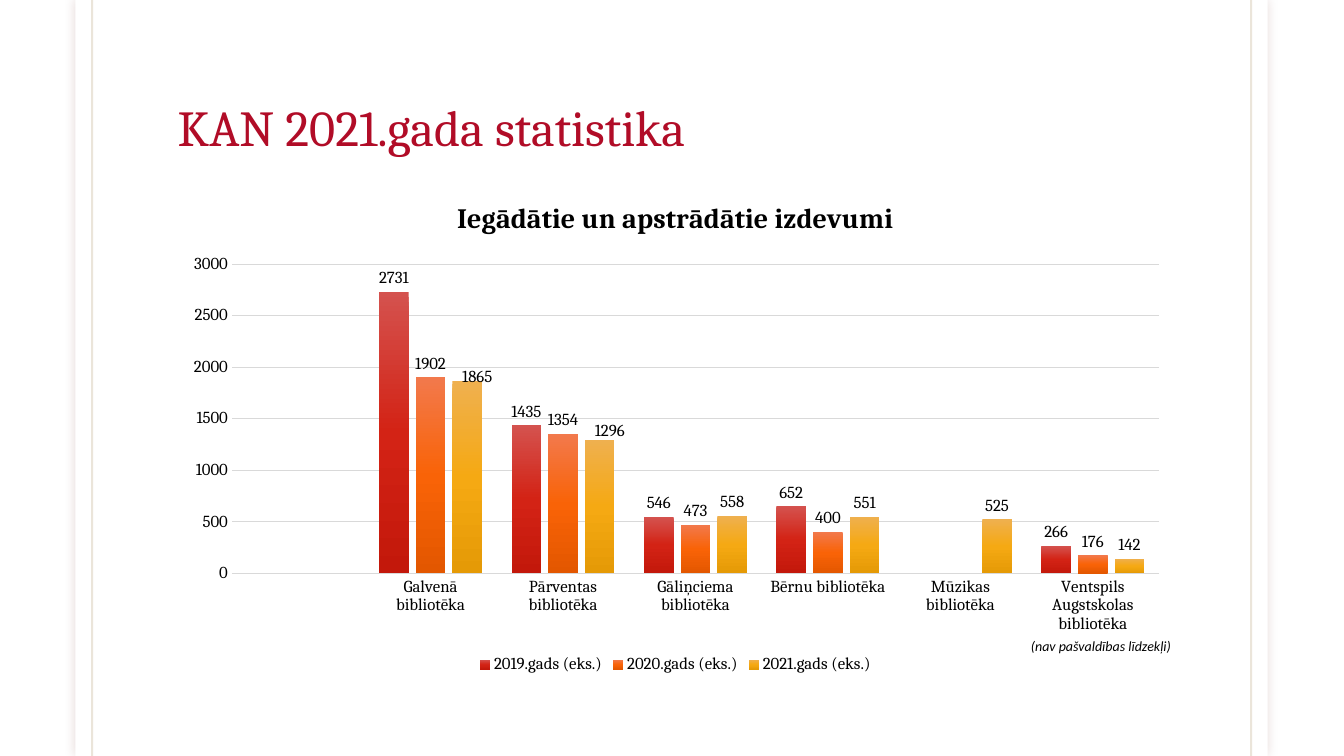
from lxml import etree
from pptx import Presentation
from pptx.chart import data
from pptx.dml.color import RGBColor
from pptx.enum import chart as kinds, shapes, text
from pptx.oxml import parse_xml
from pptx.oxml import ns
from pptx.util import Cm, Pt

WHITE = RGBColor(0xFF, 0xFF, 0xFF)
BLACK = RGBColor(0x00, 0x00, 0x00)
CRIMSON = RGBColor(0xB1, 0x0C, 0x27)
BROWN = RGBColor(0x79, 0x54, 0x0B)
MAROON = RGBColor(0x65, 0x15, 0x0F)
GRID = RGBColor(0xD9, 0xD9, 0xD9)
REDS = RGBColor(0xD4, 0x52, 0x4E), RGBColor(0xD3, 0x23, 0x15), RGBColor(0xC3, 0x18, 0x0B)
ORANGES = RGBColor(0xF2, 0x79, 0x4C), RGBColor(0xF9, 0x63, 0x07), RGBColor(0xE3, 0x57, 0x00)
AMBERS = RGBColor(0xEF, 0xB0, 0x4F), RGBColor(0xF5, 0xA9, 0x13), RGBColor(0xE5, 0x9A, 0x06)

LIBRARIES = ["", "Galvenā bibliotēka", "Pārventas bibliotēka", "Gāliņciema bibliotēka",
             "Bērnu bibliotēka", "Mūzikas bibliotēka", "Ventspils Augstskolas bibliotēka"]
YEARS = [
    ("2019.gads (eks.)", [None, 2731, 1435, 546, 652, None, 266], REDS),
    ("2020.gads (eks.)", [None, 1902, 1354, 473, 400, None, 176], ORANGES),
    ("2021.gads (eks.)", [None, 1865, 1296, 558, 551, 525, 142], AMBERS),
]
LABEL_SHIFTS = {1: (0.01, 0.02), 2: (0.01, 0.01)}
PLOT_AREA = {"x": 0.06, "y": 0.17, "w": 0.92, "h": 0.62}


def style_font(font, size=12, name="Cambria", color=BLACK, bold=False, italic=False):
    """Apply a complete character format to a font."""
    font.size, font.name, font.bold, font.italic = Pt(size), name, bold, italic
    font.color.rgb = color


def write_text(frame, words, spacing=None, **style):
    """Write one formatted paragraph into a text frame."""
    para = frame.paragraphs[0]
    para.alignment = text.PP_ALIGN.LEFT
    if spacing:
        para.line_spacing = spacing
    span = para.add_run()
    span.text = words
    style_font(span.font, **style)


def add_effects(shape, content=""):
    """Replace the inherited effects of a shape with the given ones."""
    shape._element.spPr.append(
        parse_xml(f"<a:effectLst {ns.nsdecls('a')}>{content}</a:effectLst>"))


def manual_layout(inner=False, **places):
    """Build a chart layout element from fractions of the chart."""
    target = '<c:layoutTarget val="inner"/>' if inner else ""
    modes = "".join(f'<c:{key}Mode val="edge"/>' for key in ("x", "y")) if inner else ""
    values = "".join(f'<c:{key} val="{value}"/>' for key, value in places.items())
    return parse_xml(f"<c:layout {ns.nsdecls('c')}><c:manualLayout>"
                     f"{target}{modes}{values}</c:manualLayout></c:layout>")


def build_panel(page, left, top, width, height):
    """Draw the white panel with its soft shadow and two side rules."""
    panel = page.shapes.add_shape(shapes.MSO_SHAPE.RECTANGLE,
                                  Cm(left), Cm(top), Cm(width), Cm(height))
    panel.fill.solid()
    panel.fill.fore_color.rgb = WHITE
    panel.line.fill.background()
    add_effects(panel, f'<a:outerShdw blurRad="{Pt(7)}" dist="0" dir="0" algn="ctr" '
                       f'rotWithShape="0"><a:srgbClr val="{MAROON}">'
                       '<a:alpha val="15000"/></a:srgbClr></a:outerShdw>')
    inset = 0.42
    for x in (left + inset, left + width - inset):
        rule = page.shapes.add_connector(shapes.MSO_CONNECTOR.STRAIGHT,
                                         Cm(x), Cm(top), Cm(x), Cm(top + height))
        rule.line.width = Pt(1.5)
        rule.line.color.rgb = BROWN
        color = rule._element.spPr.find(".//" + ns.qn("a:srgbClr"))
        etree.SubElement(color, ns.qn("a:alpha")).set("val", "15000")
        add_effects(rule)


def build_title(page, left, top, width, height):
    """Place the title placeholder in front of the panel."""
    title = page.shapes.title
    title.left, title.top, title.width, title.height = map(Cm, (left, top, width, height))
    title.text_frame.vertical_anchor = text.MSO_ANCHOR.BOTTOM
    write_text(title.text_frame, "KAN 2021.gada statistika", spacing=0.85, size=36, color=CRIMSON)
    page.shapes._spTree.append(title._element)


def style_series(series, colors):
    """Give a series its vertical gradient and value labels."""
    fill = series.format.fill
    fill.gradient()
    stops = "".join(f'<a:gs pos="{place}"><a:srgbClr val="{color}"/></a:gs>'
                    for place, color in zip((0, 50000, 100000), colors))
    gradient = parse_xml(f"<a:gradFill {ns.nsdecls('a')} rotWithShape=\"1\"><a:gsLst>{stops}"
                         '</a:gsLst><a:lin ang="5400000" scaled="0"/></a:gradFill>')
    default = series._element.find(".//" + ns.qn("a:gradFill"))
    default.getparent().replace(default, gradient)
    series.invert_if_negative = False
    labels = series.data_labels
    labels.show_value = True
    labels.position = kinds.XL_LABEL_POSITION.OUTSIDE_END
    style_font(labels.font)


def shift_labels(series):
    """Nudge the labels that would touch a neighbouring bar."""
    for index, (x, y) in LABEL_SHIFTS.items():
        label = series.points[index].data_label
        label.position = kinds.XL_LABEL_POSITION.OUTSIDE_END
        style_font(label.font)
    for item in series._element.iter(ns.qn("c:dLbl")):
        mark = item.find(ns.qn("c:idx"))
        x, y = LABEL_SHIFTS[int(mark.get("val"))]
        mark.addnext(manual_layout(x=x, y=y))


def style_axes(chart):
    """Format both axes and the gridlines."""
    for axis in (chart.category_axis, chart.value_axis):
        axis.major_tick_mark = axis.minor_tick_mark = kinds.XL_TICK_MARK.NONE
        style_font(axis.tick_labels.font)
    values = chart.value_axis
    values.minimum_scale, values.maximum_scale, values.major_unit = 0, 3000, 500
    values.format.line.fill.background()
    for line in (chart.category_axis.format.line, values.major_gridlines.format.line):
        line.color.rgb = GRID
        line.width = Pt(0.75)


def build_chart(page, left, top, width, height):
    """Chart the items acquired by each library over three years."""
    source = data.CategoryChartData()
    source.categories = LIBRARIES
    for name, values, _ in YEARS:
        source.add_series(name, values)
    chart = page.shapes.add_chart(kinds.XL_CHART_TYPE.COLUMN_CLUSTERED, Cm(left), Cm(top),
                                  Cm(width), Cm(height), source).chart
    style_font(chart.font)
    write_text(chart.chart_title.text_frame, "Iegādātie un apstrādātie izdevumi",
               size=20, bold=True)
    chart.chart_title.include_in_layout = False
    chart.has_legend = True
    chart.legend.position = kinds.XL_LEGEND_POSITION.BOTTOM
    chart.legend.include_in_layout = False
    style_font(chart.legend.font)
    style_axes(chart)
    plot = chart.plots[0]
    plot.gap_width, plot.overlap, plot.vary_by_categories = 100, -24, False
    for series, (_, _, colors) in zip(plot.series, YEARS):
        style_series(series, colors)
    shift_labels(plot.series[-1])
    area = chart._chartSpace.find(".//" + ns.qn("c:plotArea"))
    for old in area.findall(ns.qn("c:layout")):
        area.remove(old)
    area.insert(0, manual_layout(inner=True, **PLOT_AREA))


def build_note(page, left, top, width, height):
    """Add the funding remark under the last library."""
    note = page.shapes.add_textbox(Cm(left), Cm(top), Cm(width), Cm(height))
    note.text_frame.word_wrap = False
    note.text_frame.auto_size = text.MSO_AUTO_SIZE.SHAPE_TO_FIT_TEXT
    write_text(note.text_frame, "(nav pašvaldības līdzekļi)", size=10, name="Calibri", italic=True)


def main():
    """Build and save the statistics slide."""
    deck = Presentation()
    deck.slide_width, deck.slide_height = Cm(33.87), Cm(19.05)
    page = deck.slides.add_slide(deck.slide_layouts[5])
    build_panel(page, 1.9, 0, 30.05, 19.05)
    build_title(page, 4.22, 0.89, 25.4, 3.18)
    build_chart(page, 4.32, 4.52, 25.4, 12.57)
    build_note(page, 25.73, 15.93, 4.09, 0.69)
    deck.save("out.pptx")


if __name__ == "__main__":
    main()
